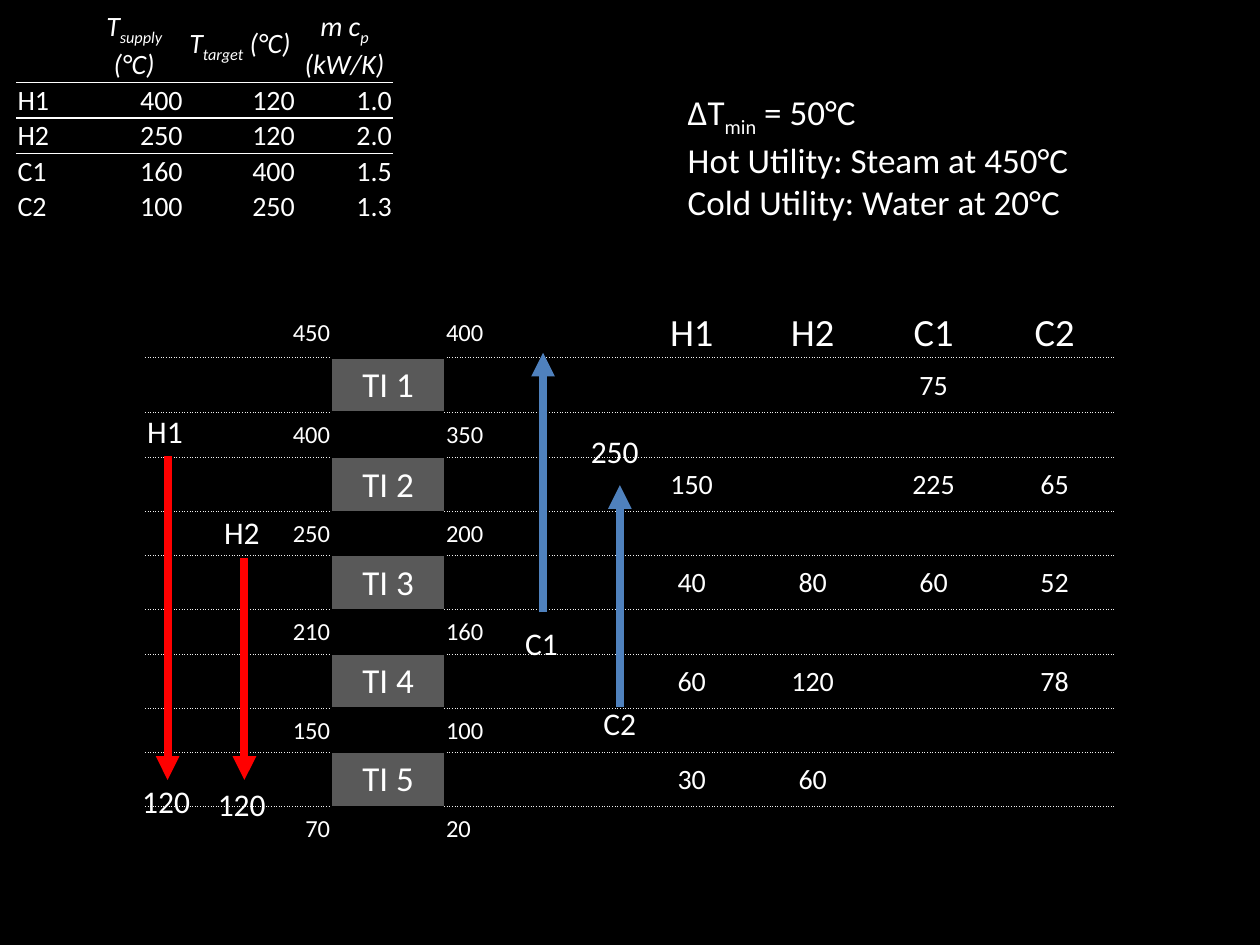
import pptx
import pptx.util
import pptx.dml.color
import pptx.enum.text
import pptx.enum.shapes
from lxml import etree
from pptx.oxml.ns import qn

Inches = pptx.util.Inches
ALIGN = pptx.enum.text.PP_ALIGN
ANCHOR = pptx.enum.text.MSO_ANCHOR

THEME = {
    "font": "Calibri",
    "bg": "000000", "text": "FFFFFF", "interval": "595959", "dotted": "F2F2F2",
    "hot": "FF0000", "cold": "4F81BD",
    "small": 14, "body": 16, "label": 18, "large": 20, "head": 22,
}
NO_STYLE = "{2D5ABB26-0587-4C30-8999-92F81FD0307C}"

# In a tuple of runs, every second run is a subscript.
STREAM_HEAD = ["", ("T", "supply", " (°C)"), ("T", "target", " (°C)"), ("m c", "p", " (kW/K)")]
STREAMS = [
    ("H1", "400", "120", "1.0"),
    ("H2", "250", "120", "2.0"),
    ("C1", "160", "400", "1.5"),
    ("C2", "100", "250", "1.3"),
]
CONDITIONS = [("∆T", "min", " = 50°C"), "Hot Utility: Steam at 450°C", "Cold Utility: Water at 20°C"]

SHIFTED_TEMPS = [("450", "400"), ("400", "350"), ("250", "200"),
                 ("210", "160"), ("150", "100"), ("70", "20")]
STREAM_NAMES = ["H1", "H2", "C1", "C2"]
HEAT_LOADS = [
    ("", "", "75", ""),
    ("150", "", "225", "65"),
    ("40", "80", "60", "52"),
    ("60", "120", "", "78"),
    ("30", "60", "", ""),
]
TI_COL = 2

# x, start y, end y, colour
ARROWS = [(1.33, 3.62, 6.19, "hot"), (1.94, 4.43, 6.19, "hot"),
          (4.31, 4.86, 2.8, "cold"), (4.92, 5.61, 3.85, "cold")]
# text, left, top, width
LABELS = [("H1", 1.07, 3.22, 0.49), ("120", 1.03, 6.16, 0.59),
          ("H2", 1.68, 4.02, 0.49), ("120", 1.63, 6.18, 0.59),
          ("C1", 4.07, 4.9, 0.46), ("C2", 4.69, 5.54, 0.46), ("250", 4.59, 3.38, 0.59)]


def rgb(name):
    return pptx.dml.color.RGBColor.from_string(THEME[name])


def write(tf, *lines, size="body", align=ALIGN.LEFT, italic=False):
    """Fill a text frame, one paragraph a line."""
    for i, line in enumerate(lines):
        p = tf.paragraphs[0] if i == 0 else tf.add_paragraph()
        p.alignment = align
        for j, text in enumerate((line,) if isinstance(line, str) else line):
            r = p.add_run()
            r.text = text
            r.font.name = THEME["font"]
            r.font.size = pptx.util.Pt(THEME[size])
            r.font.color.rgb = rgb("text")
            r.font.italic = italic
            if j % 2:
                r._r.get_or_add_rPr().set("baseline", "-25000")


def add_text(slide, left, top, width, height, *lines, **fmt):
    tf = slide.shapes.add_textbox(*map(Inches, (left, top, width, height))).text_frame
    tf.word_wrap = False
    write(tf, *lines, **fmt)


def add_grid(slide, left, top, cols, rows):
    """Add a table without style and with narrow cell margins."""
    table = slide.shapes.add_table(len(rows), len(cols), *map(
        Inches, (left, top, sum(cols), sum(rows)))).table
    table.first_row = table.horz_banding = False
    table._tbl.tblPr.find(qn("a:tableStyleId")).text = NO_STYLE
    for col, width in zip(table.columns, cols):
        col.width = Inches(width)
    for row, height in zip(table.rows, rows):
        row.height = Inches(height)
    for cell in table.iter_cells():
        cell.margin_left = cell.margin_right = cell.margin_top = Inches(0.01)
        cell.margin_bottom = 0
        cell.vertical_anchor = ANCHOR.MIDDLE
    return table


def set_borders(cell, sides, color, width, dash="solid"):
    """Sides are given in the order L, R, T, B; set them before the fill."""
    tcPr = cell._tc.get_or_add_tcPr()
    for side in sides:
        ln = etree.SubElement(tcPr, qn("a:ln" + side), w=str(pptx.util.Pt(width)))
        fill = etree.SubElement(ln, qn("a:solidFill"))
        etree.SubElement(fill, qn("a:srgbClr"), val=THEME[color])
        etree.SubElement(ln, qn("a:prstDash"), val=dash)


def add_stream_table(slide):
    table = add_grid(slide, 0.13, 0.07, [0.54, 0.79, 0.89, 0.77], [0.57] + [0.28] * 4)
    for i, row in enumerate([STREAM_HEAD] + STREAMS):
        for j, text in enumerate(row):
            cell = table.cell(i, j)
            if i < 3:
                set_borders(cell, ["B", "TB", "T"][i], "text", 1)
            cell.fill.background()
            if i:
                cell.vertical_anchor = ANCHOR.BOTTOM
            align = ALIGN.CENTER if i == 0 else ALIGN.RIGHT if j else ALIGN.LEFT
            if text:
                write(cell.text_frame, text, align=align, italic=i == 0)


def add_cascade_table(slide):
    """Temperature rows alternate with interval rows."""
    cols = [0.9, 0.58, 0.9, 0.58, 0.9] + [0.96] * 4
    rows = [0.4, 0.43, 0.36] + [0.43, 0.35] * 4
    table = add_grid(slide, 1.15, 2.44, cols, rows)
    last = len(rows) - 1
    for i in range(len(rows)):
        for j in range(len(cols)):
            cell = table.cell(i, j)
            interval = i % 2 == 1 and j == TI_COL
            if interval:
                set_borders(cell, "LRTB", "bg", 1)
            elif j != TI_COL:
                sides = "B" if i == 0 else "T" if i == last else "TB"
                set_borders(cell, sides, "dotted", 0.5, "sysDot")
            cell.fill.solid()
            cell.fill.fore_color.rgb = rgb("interval" if interval else "bg")

    def put(i, j, text, size, align=ALIGN.CENTER):
        if text:
            write(table.cell(i, j).text_frame, text, size=size, align=align)

    for n, (hot, cold) in enumerate(SHIFTED_TEMPS):
        put(2 * n, TI_COL - 1, hot, "small", ALIGN.RIGHT)
        put(2 * n, TI_COL + 1, cold, "small", ALIGN.LEFT)
    for k, name in enumerate(STREAM_NAMES):
        put(0, 5 + k, name, "head")
    for n, loads in enumerate(HEAT_LOADS):
        put(2 * n + 1, TI_COL, f"TI {n + 1}", "large")
        for k, load in enumerate(loads):
            put(2 * n + 1, 5 + k, load, "body")


def add_arrow(slide, x, start, end, color):
    s = slide.shapes.add_connector(pptx.enum.shapes.MSO_CONNECTOR.STRAIGHT,
                                   *map(Inches, (x, start, x, end)))
    s.line.color.rgb = rgb(color)
    s.line.width = pptx.util.Pt(4.5)
    etree.SubElement(s.line._get_or_add_ln(), qn("a:tailEnd"), type="triangle")
    etree.SubElement(s._element.spPr, qn("a:effectLst"))


def main():
    prs = pptx.Presentation()
    prs.slide_width, prs.slide_height = Inches(10), Inches(7.5)
    slide = prs.slides.add_slide(prs.slide_layouts[6])
    slide.background.fill.solid()
    slide.background.fill.fore_color.rgb = rgb("bg")

    add_stream_table(slide)
    add_text(slide, 5.36, 0.67, 3.25, 1.11, *CONDITIONS, size="large")
    add_cascade_table(slide)
    for arrow in ARROWS:
        add_arrow(slide, *arrow)
    for text, left, top, width in LABELS:
        add_text(slide, left, top, width, 0.4, text, size="label")
    prs.save("out.pptx")


if __name__ == "__main__":
    main()
